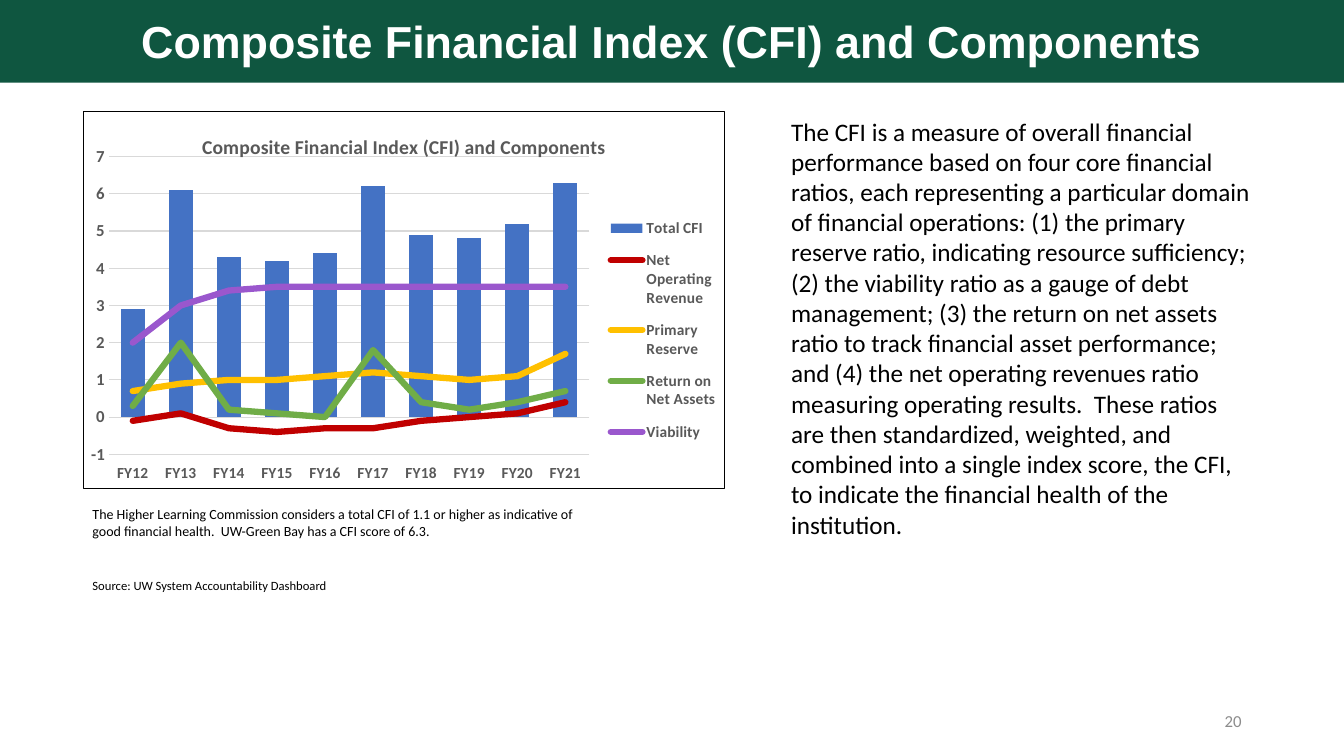
from lxml import etree
from pptx import Presentation
from pptx import util as u
from pptx.chart.data import CategoryChartData
from pptx.dml.color import RGBColor
from pptx.enum import chart as charts, shapes, text
from pptx.oxml import parse_xml
from pptx.oxml.ns import nsdecls, qn

GREEN = RGBColor(0x0F, 0x56, 0x40)
WHITE = RGBColor(0xFF, 0xFF, 0xFF)
BLACK = RGBColor(0, 0, 0)
PAGE_GREY = RGBColor(0x8C, 0x8C, 0x8C)
LABEL_GREY = RGBColor(0x59, 0x59, 0x59)
GRID_GREY = RGBColor(0xD9, 0xD9, 0xD9)
BLUE = RGBColor(0x44, 0x72, 0xC4)
RED = RGBColor(0xC0, 0, 0)
GOLD = RGBColor(0xFF, 0xC0, 0)
LEAF = RGBColor(0x70, 0xAD, 0x47)
PURPLE = RGBColor(0x9A, 0x57, 0xCD)

HEADING = "Composite Financial Index (CFI) and Components"
YEARS = [f"FY{year}" for year in range(12, 22)]
# The first component is drawn as columns, the others as lines
COMPONENTS = [
    ("Total CFI", BLUE, [2.9, 6.1, 4.3, 4.2, 4.4, 6.2, 4.9, 4.8, 5.2, 6.3]),
    ("Net Operating Revenue", RED,
     [-0.1, 0.1, -0.3, -0.4, -0.3, -0.3, -0.1, 0, 0.1, 0.4]),
    ("Primary Reserve", GOLD, [0.7, 0.9, 1, 1, 1.1, 1.2, 1.1, 1, 1.1, 1.7]),
    ("Return on Net Assets", LEAF,
     [0.3, 2, 0.2, 0.1, 0, 1.8, 0.4, 0.2, 0.4, 0.7]),
    ("Viability", PURPLE, [2, 3, 3.4] + [3.5] * 7),
]
EXPLANATION = (
    "The CFI is a measure of overall financial performance based on four core "
    "financial ratios, each representing a particular domain of financial "
    "operations: (1) the primary reserve ratio, indicating resource "
    "sufficiency; (2) the viability ratio as a gauge of debt management; (3) "
    "the return on net assets ratio to track financial asset performance; and "
    "(4) the net operating revenues ratio measuring operating results.  These "
    "ratios are then standardized, weighted, and combined into a single index "
    "score, the CFI, to indicate the financial health of the institution.")
BENCHMARK = (
    "The Higher Learning Commission considers a total CFI of 1.1 or higher as "
    "indicative of good financial health.  UW-Green Bay has a CFI score of 6.3.")


def style_font(font, size, color, bold=False, name="Calibri"):
    font.size, font.bold, font.name = u.Pt(size), bold, name
    font.color.rgb = color


def write(frame, words, align=text.PP_ALIGN.LEFT,
          anchor=text.MSO_ANCHOR.TOP, **font):
    frame.word_wrap = True
    frame.vertical_anchor = anchor
    paragraph = frame.paragraphs[0]
    paragraph.alignment = align
    run = paragraph.add_run()
    run.text = words
    style_font(run.font, **font)


def place(parent, before, x, y, width=None, height=None, inner=False):
    """Give a chart part a manual layout, in fractions of the chart."""
    for old in parent.findall(qn("c:layout")):
        parent.remove(old)
    layout = etree.Element(qn("c:layout"))
    manual = etree.SubElement(layout, qn("c:manualLayout"))
    settings = [("layoutTarget", "inner" if inner else None),
                ("xMode", "edge"), ("yMode", "edge"),
                ("x", x), ("y", y), ("w", width), ("h", height)]
    for tag, value in settings:
        if value is not None:
            etree.SubElement(manual, qn(f"c:{tag}")).set("val", str(value))
    before.addprevious(layout)


def move_to_lines(chart):
    """Turn every series but the first into a line on the same axes."""
    columns = chart.plots[0]._element
    lines = parse_xml(
        f'<c:lineChart {nsdecls("c")}><c:grouping val="standard"/>'
        '<c:varyColors val="0"/><c:marker val="1"/></c:lineChart>')
    marker = lines.find(qn("c:marker"))
    for series in columns.findall(qn("c:ser"))[1:]:
        for invert in series.findall(qn("c:invertIfNegative")):
            series.remove(invert)
        marker.addprevious(series)
    for axis in columns.findall(qn("c:axId")):
        etree.SubElement(lines, qn("c:axId")).set("val", axis.get("val"))
    columns.addnext(lines)


class SlideBuilder:
    def __init__(self, slide):
        self.slide = slide

    def label(self, box, words, **style):
        area = self.slide.shapes.add_textbox(*map(u.Pt, box))
        write(area.text_frame, words, **style)

    def banner(self, box, words, fill, **style):
        band = self.slide.shapes.add_shape(
            shapes.MSO_SHAPE.RECTANGLE, *map(u.Pt, box))
        band.shadow.inherit = False
        band.fill.solid()
        band.fill.fore_color.rgb = fill
        band.line.fill.background()
        write(band.text_frame, words, align=text.PP_ALIGN.CENTER,
              anchor=text.MSO_ANCHOR.MIDDLE, **style)

    def combined_chart(self, box, title, categories, components):
        data = CategoryChartData()
        data.categories = categories
        for name, _, values in components:
            data.add_series(name, values)
        chart = self.slide.shapes.add_chart(
            charts.XL_CHART_TYPE.COLUMN_CLUSTERED, *map(u.Pt, box), data).chart
        style_font(chart.font, 10, BLACK)

        # Columns and lines
        move_to_lines(chart)
        column_plot, line_plot = chart.plots
        column_plot.gap_width, column_plot.overlap = 100, -27
        column_plot.vary_by_categories = False
        total = column_plot.series[0]
        total.format.fill.solid()
        total.format.fill.fore_color.rgb = components[0][1]
        for series, (_, color, _) in zip(line_plot.series, components[1:]):
            series.smooth = False
            series.marker.style = charts.XL_MARKER_STYLE.NONE
            series.format.line.color.rgb = color
            series.format.line.width = u.Pt(4.5)
            series.format.line._get_or_add_ln().set("cap", "rnd")

        # Axes
        years, scores = chart.category_axis, chart.value_axis
        for axis, size in ((years, 11), (scores, 12)):
            axis.major_tick_mark = axis.minor_tick_mark = charts.XL_TICK_MARK.NONE
            style_font(axis.tick_labels.font, size, LABEL_GREY, bold=True)
        years.tick_label_position = charts.XL_TICK_LABEL_POSITION.LOW
        scores.minimum_scale, scores.maximum_scale, scores.major_unit = -1, 7, 1
        scores.format.line.fill.background()
        for line in (years.format.line, scores.major_gridlines.format.line):
            line.color.rgb, line.width = GRID_GREY, u.Pt(0.75)

        # Title and legend
        write(chart.chart_title.text_frame, title, align=text.PP_ALIGN.CENTER,
              size=14, color=LABEL_GREY, bold=True)
        chart.chart_title.include_in_layout = False
        chart.has_legend = True
        chart.legend.position = charts.XL_LEGEND_POSITION.RIGHT
        chart.legend.include_in_layout = False
        style_font(chart.legend.font, 11, LABEL_GREY, bold=True)

        # Placement and border
        heading, legend = chart.chart_title._element, chart.legend._element
        place(heading, heading.find(qn("c:overlay")), 0.18, 0.05)
        place(legend, legend.find(qn("c:overlay")), 0.82, 0.25, 0.17, 0.66)
        plot_area = column_plot._element.getparent()
        place(plot_area, column_plot._element, 0.04, 0.12, 0.75, 0.79, inner=True)
        plot_area.getparent().addnext(parse_xml(
            f'<c:spPr {nsdecls("c", "a")}><a:noFill/><a:ln w="9525"><a:solidFill>'
            f'<a:srgbClr val="{BLACK}"/></a:solidFill></a:ln></c:spPr>'))


def main():
    deck = Presentation()
    deck.slide_width, deck.slide_height = u.Pt(960), u.Pt(540)
    page = SlideBuilder(deck.slides.add_slide(deck.slide_layouts[6]))

    # Chart and explanation
    page.combined_chart((59, 79.2, 458.6, 270), HEADING, YEARS, COMPONENTS)
    page.label((558, 79.2, 343.4, 312.5), EXPLANATION, size=18, color=BLACK)

    # Notes under the chart
    page.label((59, 357.8, 377.3, 31.7), BENCHMARK, size=10, color=BLACK)
    page.label((59, 409, 227.5, 18), "Source: UW System Accountability Dashboard",
               size=9, color=BLACK)

    # Heading and page number
    page.banner((0, -0.7, 960, 59.8), HEADING, GREEN,
                size=32, color=WHITE, bold=True, name="Arial")
    page.label((678, 500.4, 216, 28.8), "20", align=text.PP_ALIGN.RIGHT,
               anchor=text.MSO_ANCHOR.MIDDLE, size=12, color=PAGE_GREY)

    deck.save("out.pptx")


if __name__ == "__main__":
    main()
